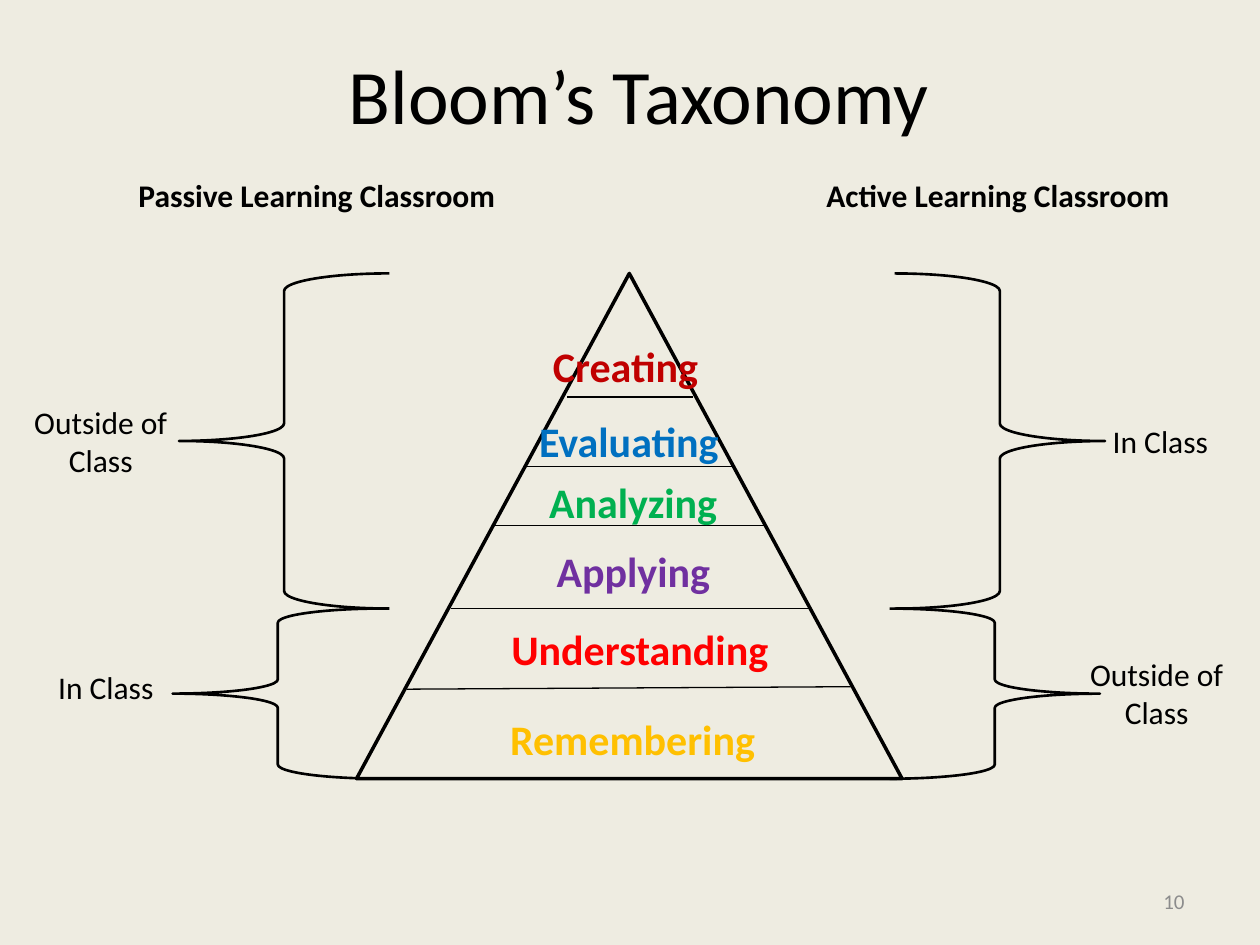
from lxml import etree
from pptx import Presentation
from pptx.dml.color import RGBColor
from pptx.enum.shapes import MSO_CONNECTOR as Connector, MSO_SHAPE as Shape
from pptx.enum.text import MSO_ANCHOR as Anchor, MSO_AUTO_SIZE as AutoSize, PP_ALIGN as Align
from pptx.oxml.ns import qn
from pptx.util import Inches, Pt


def color(hex_code):
    return RGBColor.from_string(hex_code)


class TaxonomySlide:
    FONT = "Calibri"
    INK = "000000"
    BACKGROUND = "EEECE1"

    def __init__(self, prs):
        self.slide = prs.slides.add_slide(prs.slide_layouts[6])
        fill = self.slide.background.fill
        fill.solid()
        fill.fore_color.rgb = color(self.BACKGROUND)

    def text(self, words, box, size, ink=INK, bold=False, align=Align.LEFT,
             wrap=False, anchor=Anchor.TOP, grow=True):
        frame = self.slide.shapes.add_textbox(*map(Inches, box)).text_frame
        frame.word_wrap = wrap
        frame.auto_size = AutoSize.SHAPE_TO_FIT_TEXT if grow else AutoSize.NONE
        frame.vertical_anchor = anchor
        paragraph = frame.paragraphs[0]
        paragraph.alignment = align
        run = paragraph.add_run()
        run.text = words
        run.font.name = self.FONT
        run.font.size = Pt(size)
        run.font.bold = bold
        run.font.color.rgb = color(ink)

    def outline(self, kind, box, weight, rotation=0):
        shape = self.slide.shapes.add_shape(kind, *map(Inches, box))
        shape.shadow.inherit = False
        shape.fill.background()
        shape.line.color.rgb = color(self.INK)
        shape.line.width = Pt(weight)
        shape.rotation = rotation

    def line(self, start, end, weight=0.75):
        rule = self.slide.shapes.add_connector(
            Connector.STRAIGHT, *map(Inches, (*start, *end)))
        rule.line.color.rgb = color(self.INK)
        rule.line.width = Pt(weight)
        etree.SubElement(rule._element.spPr, qn("a:effectLst"))


def main():
    prs = Presentation()
    prs.slide_width, prs.slide_height = Inches(10), Inches(7.5)
    page = TaxonomySlide(prs)

    # Slide number, title and column headings
    page.text("10", (7.17, 6.95, 2.33, 0.4), 12, "8C8C8C", align=Align.RIGHT,
              wrap=True, anchor=Anchor.MIDDLE, grow=False)
    page.text("Bloom’s Taxonomy", (2.67, 0.33, 4.85, 0.84), 44)
    page.text("Passive Learning Classroom", (1, 1.35, 3.05, 0.4), 18, bold=True)
    page.text("Active Learning Classroom", (6.46, 1.35, 2.95, 0.4), 18, bold=True)

    # Braces for the lower and upper levels, mirrored on the right
    apex, split, base = 2.17, 4.83, 6.18
    for lower_left, upper_left, rotation in ((1.37, 1.42, 0), (7.06, 7.1, 180)):
        page.outline(Shape.LEFT_BRACE, (lower_left, split, 1.67, base - split), 1.5, rotation)
        page.outline(Shape.LEFT_BRACE, (upper_left, apex, 1.67, split - apex), 1.5, rotation)

    # Where each group of levels is learned
    for place, left, top, height in (
        ("Outside of Class", 0.1, 3.15, 0.71),
        ("In Class", 0.14, 5.25, 0.4),
        ("Outside of Class", 8.48, 5.15, 0.71),
        ("In Class", 8.51, 3.3, 0.4),
    ):
        page.text(place, (left, top, 1.4, height), 18, align=Align.CENTER, wrap=True)

    # Pyramid and its dividers
    page.outline(Shape.ISOSCELES_TRIANGLE, (2.83, apex, 4.33, base - apex), 2)
    for start, end in (
        ((4.5, 3.15), (5.5, 3.15)),
        ((4.17, 3.7), (5.83, 3.7)),
        ((3.92, 4.17), (6.08, 4.17)),
        ((3.58, split), (6.42, split)),
        ((3.23, 5.47), (6.75, 5.45)),
    ):
        page.line(start, end)

    # Levels of the taxonomy
    for level, left, top, width, ink in (
        ("Analyzing", 4.26, 3.73, 1.55, "00B050"),
        ("Evaluating", 4.18, 3.25, 1.65, "0070C0"),
        ("Creating", 4.29, 2.65, 1.37, "C00000"),
        ("Applying", 4.32, 4.28, 1.43, "7030A0"),
        ("Understanding", 3.96, 4.9, 2.26, "FF0000"),
        ("Remembering", 3.95, 5.61, 2.17, "FFC000"),
    ):
        page.text(level, (left, top, width, 0.5), 24, ink, bold=True)

    prs.save("out.pptx")


if __name__ == "__main__":
    main()
